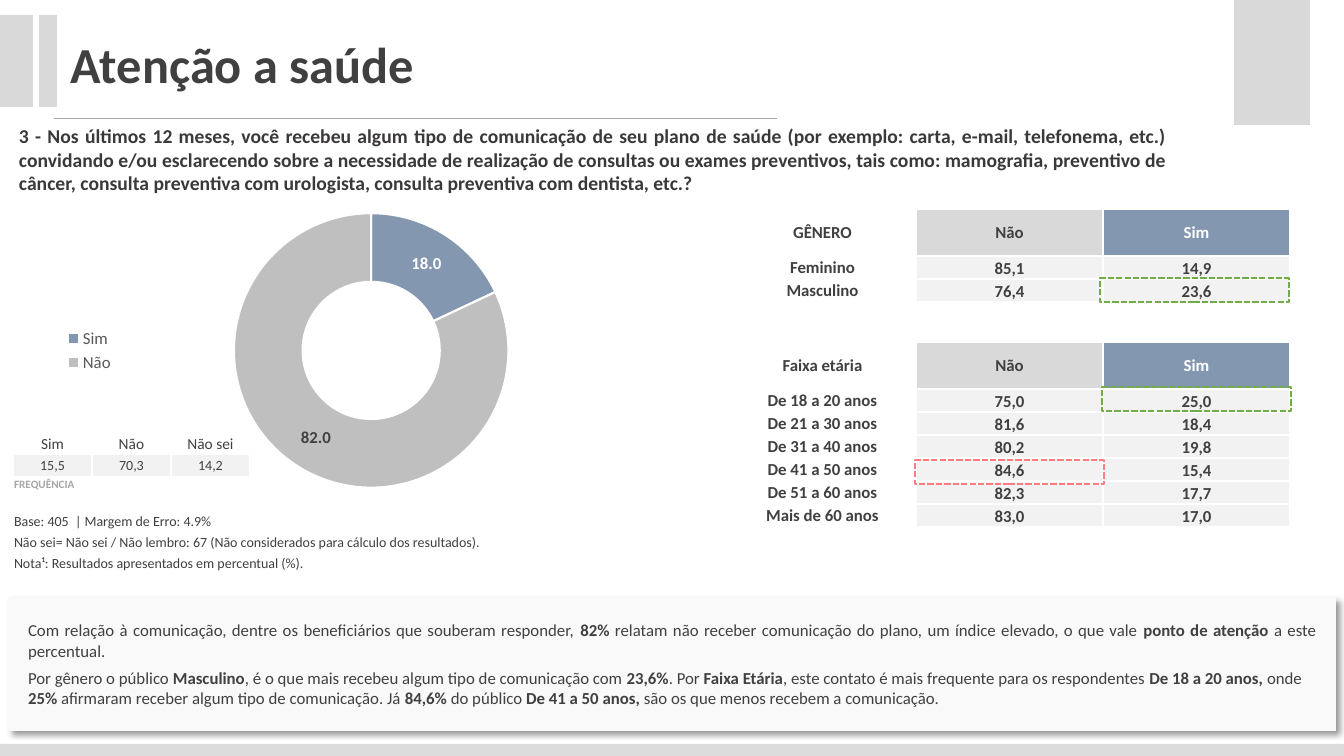
import pptx
import pptx.chart.data
import pptx.dml.color
import pptx.enum.chart
import pptx.enum.dml
import pptx.enum.shapes
import pptx.enum.text
import pptx.oxml
import pptx.oxml.ns
import pptx.util

PX = 914400 / 100.8
ALIGN = pptx.enum.text.PP_ALIGN
ANCHOR = pptx.enum.text.MSO_ANCHOR
TEXT, GREY, BLUE, PALE, WHITE = "404040", "D9D9D9", "8497B0", "F2F2F2", "FFFFFF"
GREEN, RED = "70AD47", "FF7C80"

QUESTION = ("3 - Nos últimos 12 meses, você recebeu algum tipo de comunicação de seu plano de saúde "
            "(por exemplo: carta, e-mail, telefonema, etc.) convidando e/ou esclarecendo sobre a "
            "necessidade de realização de consultas ou exames preventivos, tais como: mamografia, "
            "preventivo de câncer, consulta preventiva com urologista, consulta preventiva com "
            "dentista, etc.?")
ATTENTION = ("Com relação à comunicação, dentre os beneficiários que souberam responder, **82% **relatam "
             "não receber comunicação do plano, um índice elevado, o que vale **ponto de atenção** "
             "a este percentual.")
PROFILE = ("Por gênero o público** Masculino**, é o que mais recebeu algum tipo de comunicação com "
           "**23,6%**. Por **Faixa Etária**, este contato é mais frequente para os respondentes "
           "**De 18 a 20 anos, **onde **25%** afirmaram receber algum tipo de comunicação. Já "
           "**84,6%** do público **De 41 a 50 anos, **são os que menos recebem a comunicação.")
BREAKDOWN = [
    ("GÊNERO", "Não", "Sim"),
    ("Feminino", "85,1", "14,9"),
    ("Masculino", "76,4", "23,6"),
    ("", "", ""),
    ("Faixa etária", "Não", "Sim"),
    ("De 18 a 20 anos", "75,0", "25,0"),
    ("De 21 a 30 anos", "81,6", "18,4"),
    ("De 31 a 40 anos", "80,2", "19,8"),
    ("De 41 a 50 anos", "84,6", "15,4"),
    ("De 51 a 60 anos", "82,3", "17,7"),
    ("Mais de 60 anos", "83,0", "17,0"),
]
NOTES = [
    "Base: 405  | Margem de Erro: 4.9%",
    "Não sei= Não sei / Não lembro: 67 (Não considerados para cálculo dos resultados).",
    "Nota¹: Resultados apresentados em percentual (%).",
]


def px(*lengths):
    return [pptx.util.Emu(round(n * PX)) for n in lengths]


def rgb(value):
    return pptx.dml.color.RGBColor.from_string(value)


def xml(tag, body="", **attrs):
    """Parse one DrawingML element."""
    listed = "".join(f' {k}="{v}"' for k, v in attrs.items())
    ns = pptx.oxml.ns.nsdecls("a")
    return pptx.oxml.parse_xml(f"<a:{tag} {ns}{listed}>{body}</a:{tag}>")


def style_font(font, size, color, bold=False):
    font.name = "Calibri"
    font.size = pptx.util.Pt(size)
    font.bold = bold
    font.color.rgb = rgb(color)


def write(p, text, size=12, color=TEXT, bold=False, align=ALIGN.LEFT, before=0):
    """Fill a paragraph; text between ** marks is bold."""
    p.alignment = align
    p.space_before = pptx.util.Pt(before)
    for i, part in enumerate(text.split("**")):
        if part:
            r = p.add_run()
            r.text = part
            style_font(r.font, size, color, bold or i % 2 == 1)


def set_frame(tf, inset_x, inset_y, anchor):
    tf.word_wrap = True
    tf.auto_size = pptx.enum.text.MSO_AUTO_SIZE.NONE
    tf.vertical_anchor = anchor
    tf.margin_left, tf.margin_right, tf.margin_top, tf.margin_bottom = px(
        inset_x, inset_x, inset_y, inset_y)


class Deck:
    def __init__(self):
        self.prs = pptx.Presentation()
        self.prs.slide_width, self.prs.slide_height = px(1344, 756)
        self.s = self.prs.slides.add_slide(self.prs.slide_layouts[5])

    def title(self, text, *box):
        sp = self.s.shapes.title
        sp.left, sp.top, sp.width, sp.height = px(*box)
        set_frame(sp.text_frame, 10, 5, ANCHOR.MIDDLE)
        write(sp.text_frame.paragraphs[0], text, size=36, bold=True)

    def text(self, text, *box, **fmt):
        tf = self.s.shapes.add_textbox(*px(*box)).text_frame
        set_frame(tf, 11, 6, ANCHOR.TOP)
        write(tf.paragraphs[0], text, **fmt)

    def rect(self, *box, fill=None, dash=None):
        sp = self.s.shapes.add_shape(pptx.enum.shapes.MSO_SHAPE.RECTANGLE, *px(*box))
        sp.shadow.inherit = False
        if fill:
            sp.fill.solid()
            sp.fill.fore_color.rgb = rgb(fill)
        else:
            sp.fill.background()
        if dash:
            sp.line.color.rgb = rgb(dash)
            sp.line.width = pptx.util.Pt(1.5)
            sp.line.dash_style = pptx.enum.dml.MSO_LINE.SQUARE_DOT
        else:
            sp.line.fill.background()
        return sp

    def panel(self, *box):
        """Draw a shadowed rectangle and return its text frame."""
        sp = self.rect(*box, fill="F9F9F9")
        black = '<a:srgbClr val="000000"><a:alpha val="40000"/></a:srgbClr>'
        effects = sp._element.spPr.find(pptx.oxml.ns.qn("a:effectLst"))
        effects.append(xml("outerShdw", black, blurRad=50800, dist=38100, dir=2700000,
                           algn="tl", rotWithShape=0))
        set_frame(sp.text_frame, 20, 4, ANCHOR.MIDDLE)
        return sp.text_frame

    def line(self, x1, y1, x2, y2, color, width):
        cx = self.s.shapes.add_connector(
            pptx.enum.shapes.MSO_CONNECTOR.STRAIGHT, *px(x1, y1, x2, y2))
        cx.line.color.rgb = rgb(color)
        cx.line.width = pptx.util.Pt(width)
        cx._element.spPr.append(xml("effectLst"))

    def table(self, left, top, cols, rows):
        """Add a table without banding, from column widths and row heights."""
        tb = self.s.shapes.add_table(
            len(rows), len(cols), *px(left, top, sum(cols), sum(rows))).table
        tb.first_row = tb.horz_banding = False
        for col, width in zip(tb.columns, px(*cols)):
            col.width = width
        for row, height in zip(tb.rows, px(*rows)):
            row.height = height
        return tb

    def cell(self, c, text, fill=None, anchor=ANCHOR.MIDDLE, border=1.5, **fmt):
        c.margin_left, c.margin_top, c.margin_right, c.margin_bottom = px(1, 1, 1, 0)
        c.vertical_anchor = anchor
        white = f'<a:solidFill><a:srgbClr val="{WHITE}"/></a:solidFill>'
        for side in ("lnL", "lnR", "lnT", "lnB"):
            c._tc.get_or_add_tcPr().append(xml(side, white, w=round(border * 12700)))
        if fill:
            c.fill.solid()
            c.fill.fore_color.rgb = rgb(fill)
        else:
            c.fill.background()
        write(c.text_frame.paragraphs[0], text, **fmt)

    def doughnut(self, names, values, fills, label_colors, *box):
        data = pptx.chart.data.CategoryChartData(number_format="0.0")
        data.categories = names
        data.add_series("Series 1", values)
        chart = self.s.shapes.add_chart(
            pptx.enum.chart.XL_CHART_TYPE.DOUGHNUT, *px(*box), data).chart
        style_font(chart.font, 10, "000000")
        chart.has_title = False
        chart.has_legend = True
        chart.legend.position = pptx.enum.chart.XL_LEGEND_POSITION.LEFT
        chart.legend.include_in_layout = False
        style_font(chart.legend.font, 12, "595959")
        chart.plots[0].vary_by_categories = True
        series = chart.plots[0].series[0]
        labels = series.data_labels
        labels.show_value = True
        labels.number_format = "0.0"
        labels.number_format_is_linked = False
        style_font(labels.font, 12, WHITE, True)
        for i, (fill, color) in enumerate(zip(fills, label_colors)):
            point = series.points[i]
            point.format.fill.solid()
            point.format.fill.fore_color.rgb = rgb(fill)
            point.format.line.color.rgb = rgb(WHITE)
            point.format.line.width = pptx.util.Pt(1.5)
            style_font(point.data_label.font, 12, color, True)
        layout = chart._chartSpace.chart.plotArea.get_or_add_layout() if hasattr(
            chart._chartSpace.chart.plotArea, "get_or_add_layout") else None
        if layout is None:
            area = chart._chartSpace.chart.plotArea
            layout = area.find(pptx.oxml.ns.qn("c:layout"))
            if layout is None:
                layout = area.makeelement(pptx.oxml.ns.qn("c:layout"), {})
                area.insert(0, layout)
        parts = [("layoutTarget", "inner"), ("xMode", "edge"), ("yMode", "edge"),
                 ("x", 0.31), ("y", 0.05), ("w", 0.48), ("h", 0.9)]
        body = "".join(f'<c:{k} val="{v}"/>' for k, v in parts)
        ns = pptx.oxml.ns.nsdecls("c")
        layout.append(pptx.oxml.parse_xml(f"<c:manualLayout {ns}>{body}</c:manualLayout>"))


def main():
    d = Deck()
    d.rect(0, 744, 1344, 12, fill="DCDCDC")
    d.line(54, 118, 777, 118, "A6A6A6", 0.5)
    for box in ((0, 15, 33, 92), (39, 15, 18, 92), (1234, 0, 76, 125)):
        d.rect(*box, fill=GREY)
    d.title("Atenção a saúde", 61, 27, 372, 72)
    d.doughnut(("Sim", "Não"), (18, 82), (BLUE, "BFBFBF"), (WHITE, TEXT), 55, 198, 575, 305)
    d.text(QUESTION, 8, 118, 1170, 83, size=14, color="3B3838", bold=True, align=ALIGN.JUSTIFY)

    heads, gap = (0, 4), 3
    heights = [47 if i in heads else 40 if i == gap else 23 for i in range(len(BREAKDOWN))]
    tb = d.table(729, 209, [187] * 3, heights)
    for i, row in enumerate(BREAKDOWN):
        for j, text in enumerate(row):
            head = i in heads
            fill = None if j == 0 or i == gap else (GREY, BLUE)[j - 1] if head else PALE
            d.cell(tb.cell(i, j), text, fill=fill, bold=True, align=ALIGN.CENTER,
                   color=WHITE if head and j == 2 else TEXT,
                   anchor=ANCHOR.MIDDLE if head or j == 0 else ANCHOR.BOTTOM)
    tb.cell(gap, 0).merge(tb.cell(gap, 2))

    tf = d.panel(8, 597, 1328, 134)
    write(tf.paragraphs[0], ATTENTION, align=ALIGN.JUSTIFY)
    write(tf.add_paragraph(), PROFILE, before=5)
    for left, top, color in ((1100, 278, GREEN), (1102, 387, GREEN), (915, 460, RED)):
        d.rect(left, top, 189, 24, dash=color)

    tb = d.table(13, 433, [79] * 3, [21, 23, 24])
    for j, (name, value) in enumerate((("Sim", "15,5"), ("Não", "70,3"), ("Não sei", "14,2"))):
        d.cell(tb.cell(0, j), name, size=11, align=ALIGN.CENTER, anchor=ANCHOR.BOTTOM, border=1)
        d.cell(tb.cell(1, j), value, fill=PALE, size=10, align=ALIGN.CENTER, border=1)
        d.cell(tb.cell(2, j), "" if j else "FREQUÊNCIA", size=8, color="A6A6A6", bold=True,
               anchor=ANCHOR.TOP, border=1)
    tb.cell(2, 0).merge(tb.cell(2, 2))

    tb = d.table(13, 511, [724], [21] * 3)
    for i, note in enumerate(NOTES):
        d.cell(tb.cell(i, 0), note, size=10)
    d.prs.save("out.pptx")


if __name__ == "__main__":
    main()
